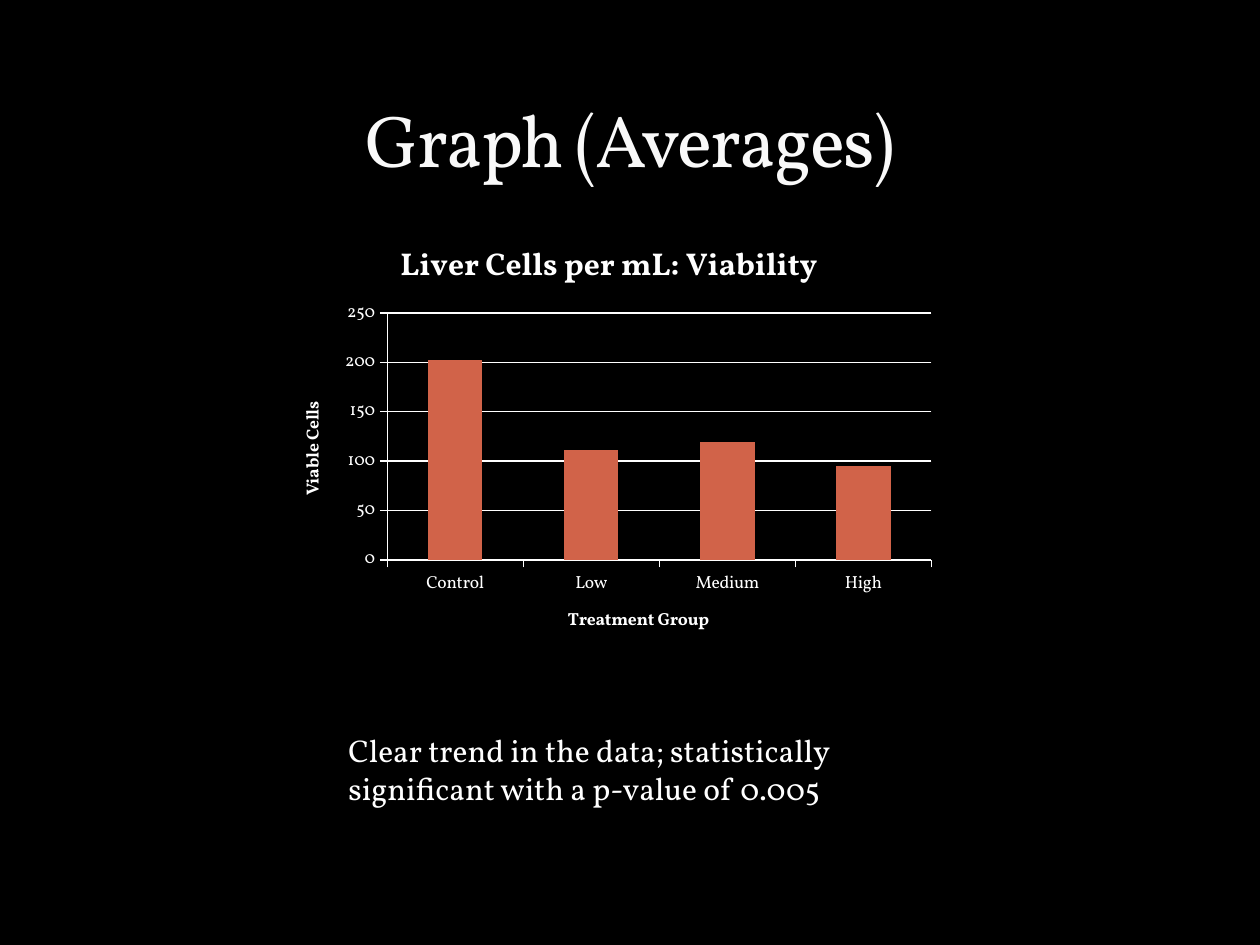
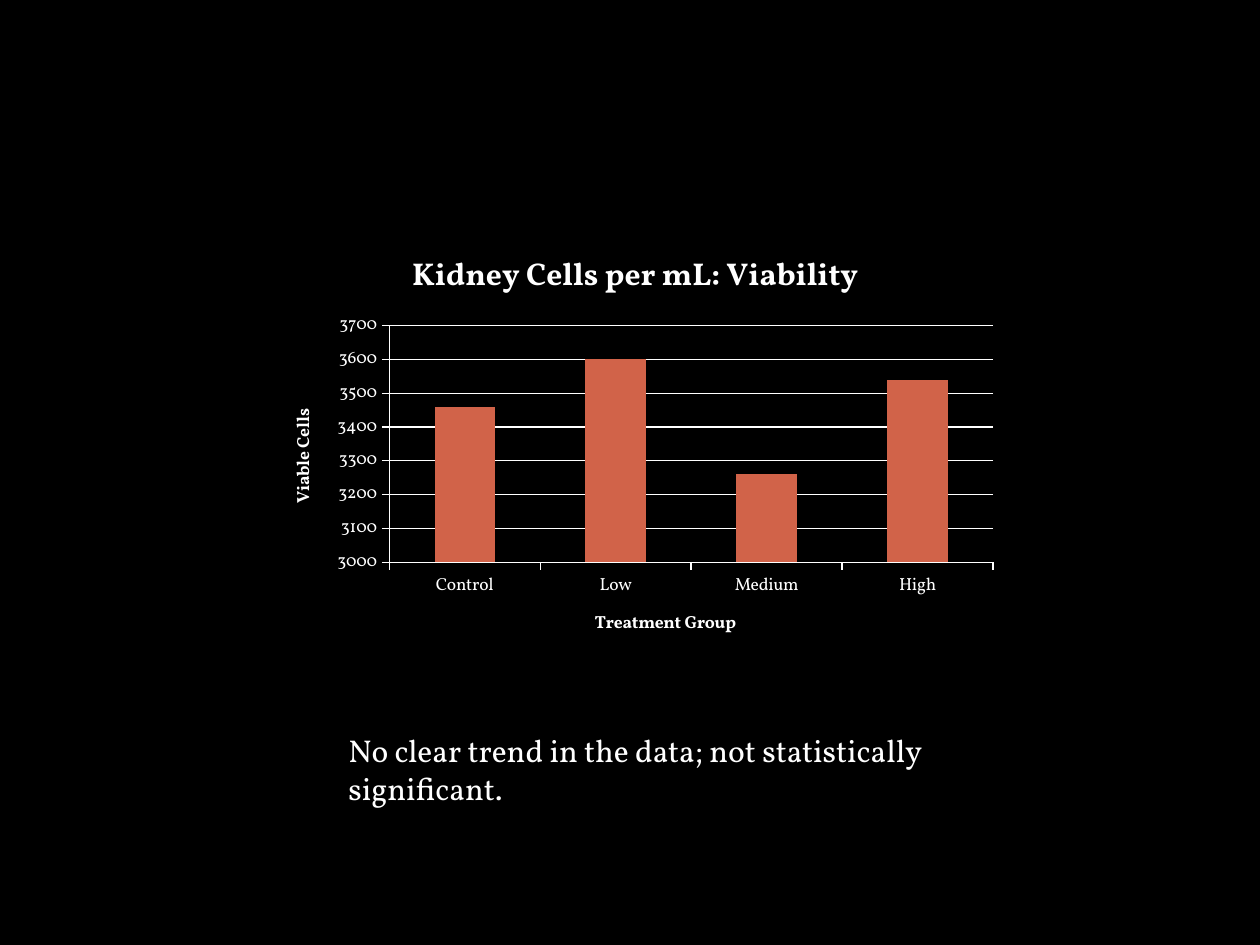
from dataclasses import dataclass
from typing import Optional

from lxml import etree
from pptx import Presentation
from pptx.chart.axis import CategoryAxis, ValueAxis
from pptx.chart.chart import Chart
from pptx.chart.data import CategoryChartData
from pptx.dml.color import RGBColor
from pptx.dml.line import LineFormat
from pptx.enum.chart import XL_CHART_TYPE, XL_TICK_MARK
from pptx.enum.text import MSO_ANCHOR, MSO_AUTO_SIZE, PP_ALIGN
from pptx.oxml.ns import qn
from pptx.presentation import Presentation as PresentationType
from pptx.slide import Slide
from pptx.text.text import Font, TextFrame, _Run
from pptx.util import Length, Pt

COLUMN_CLUSTERED = XL_CHART_TYPE.COLUMN_CLUSTERED
TICK_OUTSIDE = XL_TICK_MARK.OUTSIDE
ANCHOR_BOTTOM = MSO_ANCHOR.BOTTOM
GROW_TO_TEXT = MSO_AUTO_SIZE.SHAPE_TO_FIT_TEXT
ALIGN_CENTER = PP_ALIGN.CENTER
TITLE_ONLY_LAYOUT = 5
BLANK_LAYOUT = 6


@dataclass(frozen=True)
class Theme:
    font: str = "Vollkorn"
    background: RGBColor = RGBColor(0x00, 0x00, 0x00)
    title: RGBColor = RGBColor(0xF9, 0xF9, 0xF9)
    text: RGBColor = RGBColor(0xFF, 0xFF, 0xFF)
    column: RGBColor = RGBColor(0xD1, 0x63, 0x49)
    title_size: Length = Pt(42)
    body_size: Length = Pt(18)
    axis_size: Length = Pt(10)
    line_width: Length = Pt(0.75)


@dataclass(frozen=True)
class Box:
    left: float
    top: float
    width: float
    height: float

    def lengths(self) -> tuple[Length, Length, Length, Length]:
        return Pt(self.left), Pt(self.top), Pt(self.width), Pt(self.height)


@dataclass(frozen=True)
class ValueScale:
    minimum: int
    maximum: int
    step: int


@dataclass(frozen=True)
class ViabilitySlide:
    chart_title: str
    values: tuple[int, ...]
    scale: ValueScale
    chart_box: Box
    plot_share: Box
    conclusion: str
    title: Optional[str] = None


THEME = Theme()
TITLE_BOX = Box(36, 12, 648, 96)
CONCLUSION_BOX = Box(192, 414, 366, 51)
TREATMENT_GROUPS = ("Control", "Low", "Medium", "High")

SLIDES = (
    ViabilitySlide(
        title="Graph (Averages)",
        chart_title="Liver Cells per mL: Viability",
        values=(202, 111, 119, 95),
        scale=ValueScale(0, 250, 50),
        chart_box=Box(156, 126, 384, 252),
        plot_share=Box(0.17, 0.21, 0.81, 0.56),
        conclusion="Clear trend in the data; statistically significant "
        "with a p-value of 0.005",
    ),
    ViabilitySlide(
        chart_title="Kidney Cells per mL: Viability",
        values=(3460, 3600, 3260, 3540),
        scale=ValueScale(3000, 3700, 100),
        chart_box=Box(150, 132, 426, 246),
        plot_share=Box(0.17, 0.22, 0.81, 0.55),
        conclusion="No clear trend in the data; not statistically significant.",
    ),
)


def style_font(font: Font, size: Length, color: RGBColor) -> None:
    font.name = THEME.font
    font.size = size
    font.color.rgb = color


def add_run(
    text_frame: TextFrame,
    text: str,
    size: Length,
    color: RGBColor = THEME.text,
    bold: bool = False,
) -> _Run:
    run = text_frame.paragraphs[0].add_run()
    run.text = text
    style_font(run.font, size, color)
    run.font.bold = bold
    return run


def style_line(line: LineFormat) -> None:
    line.color.rgb = THEME.text
    line.width = THEME.line_width


def add_title(slide: Slide, text: str) -> None:
    shape = slide.shapes.title
    shape.left, shape.top, shape.width, shape.height = TITLE_BOX.lengths()
    text_frame = shape.text_frame
    text_frame.vertical_anchor = ANCHOR_BOTTOM
    text_frame.paragraphs[0].alignment = ALIGN_CENTER
    run = add_run(text_frame, text, THEME.title_size, THEME.title)
    run.font._element.set("spc", "-100")


def add_conclusion(slide: Slide, text: str) -> None:
    text_frame = slide.shapes.add_textbox(*CONCLUSION_BOX.lengths()).text_frame
    text_frame.word_wrap = True
    text_frame.auto_size = GROW_TO_TEXT
    add_run(text_frame, text, THEME.body_size)


def style_axis(axis: CategoryAxis | ValueAxis, title: str) -> None:
    axis.major_tick_mark = TICK_OUTSIDE
    style_line(axis.format.line)
    style_font(axis.tick_labels.font, THEME.axis_size, THEME.text)
    add_run(axis.axis_title.text_frame, title, THEME.axis_size, bold=True)


def place_plot(chart: Chart, share: Box) -> None:
    plot_area = chart.element.find(".//" + qn("c:plotArea"))
    for previous in plot_area.findall(qn("c:layout")):
        plot_area.remove(previous)
    layout = etree.Element(qn("c:layout"))
    manual = etree.SubElement(layout, qn("c:manualLayout"))
    settings = {
        "layoutTarget": "inner",
        "xMode": "edge",
        "yMode": "edge",
        "x": share.left,
        "y": share.top,
        "w": share.width,
        "h": share.height,
    }
    for name, value in settings.items():
        etree.SubElement(manual, qn(f"c:{name}")).set("val", str(value))
    plot_area.insert(0, layout)


def add_viability_chart(slide: Slide, content: ViabilitySlide) -> None:
    data = CategoryChartData()
    data.categories = TREATMENT_GROUPS
    data.add_series("Series 1", content.values)
    chart = slide.shapes.add_chart(
        COLUMN_CLUSTERED, *content.chart_box.lengths(), data
    ).chart
    style_font(chart.font, THEME.axis_size, THEME.text)
    chart.has_legend = False
    add_run(
        chart.chart_title.text_frame, content.chart_title, THEME.body_size, bold=True
    )

    plot = chart.plots[0]
    plot.vary_by_categories = False
    plot.gap_width = 150
    column_fill = plot.series[0].format.fill
    column_fill.solid()
    column_fill.fore_color.rgb = THEME.column

    style_axis(chart.category_axis, "Treatment Group")
    value_axis = chart.value_axis
    style_axis(value_axis, "Viable Cells")
    value_axis.minimum_scale = content.scale.minimum
    value_axis.maximum_scale = content.scale.maximum
    value_axis.major_unit = content.scale.step
    value_axis.has_major_gridlines = True
    style_line(value_axis.major_gridlines.format.line)
    title_body = value_axis.axis_title.element.find(".//" + qn("a:bodyPr"))
    title_body.set("rot", "-5400000")
    title_body.set("vert", "horz")
    place_plot(chart, content.plot_share)


def add_viability_slide(
    presentation: PresentationType, content: ViabilitySlide
) -> None:
    layout_index = TITLE_ONLY_LAYOUT if content.title else BLANK_LAYOUT
    slide = presentation.slides.add_slide(presentation.slide_layouts[layout_index])
    if content.title:
        add_title(slide, content.title)
    add_viability_chart(slide, content)
    add_conclusion(slide, content.conclusion)


def main() -> None:
    presentation = Presentation()
    presentation.slide_width = Pt(720)
    presentation.slide_height = Pt(540)
    background = presentation.slide_master.background.fill
    background.solid()
    background.fore_color.rgb = THEME.background
    for content in SLIDES:
        add_viability_slide(presentation, content)
    presentation.save("out.pptx")


if __name__ == "__main__":
    main()
